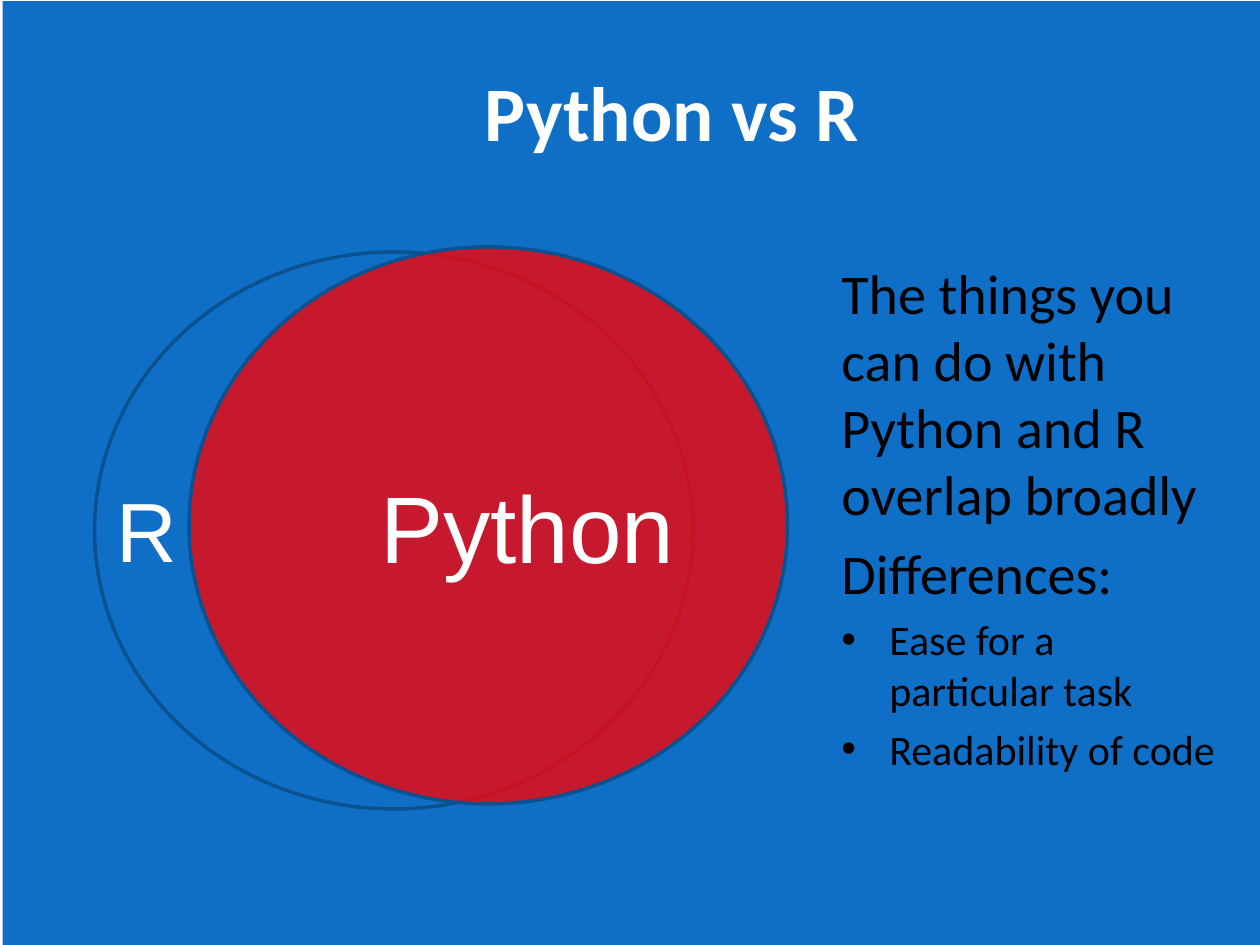
from lxml.etree import SubElement
from pptx import Presentation
from pptx.dml.color import RGBColor
from pptx.enum.shapes import MSO_SHAPE as Shape
from pptx.enum.text import MSO_ANCHOR as Anchor, PP_ALIGN as Align
from pptx.oxml.ns import qn
from pptx.util import Inches, Pt

COLUMNS, ROWS = 100, 75
BLUE, EDGE, RED, WHITE, BLACK = "0F6FC6", "0A5190", "FF0000", "FFFFFF", "000000"


def color(value):
    """Turn a hex string into a colour."""
    return RGBColor.from_string(value)


def apply(target, values):
    """Set every attribute named in the dict of format values."""
    for name, value in values.items():
        setattr(target, name, value)


class SlideBuilder:
    """Hold the style and the current slide, and draw on its grid."""

    title = {"name": "Calibri", "size": Pt(44), "bold": True}
    body = {"name": "Calibri", "size": Pt(32)}
    bullet = {"name": "Calibri", "size": Pt(24)}
    python_label = {"name": "Arial", "size": Pt(54)}
    r_label = {"name": "Arial", "size": Pt(48)}

    def __init__(self, presentation):
        """Add a blank slide and measure its grid cells."""
        self.slide = presentation.slides.add_slide(presentation.slide_layouts[6])
        self.column = presentation.slide_width / COLUMNS
        self.row = presentation.slide_height / ROWS

    def place(self, left, top, width, height):
        """Convert columns and rows to slide lengths."""
        return [round(n * unit) for n, unit in zip(
            (left, top, width, height), (self.column, self.row) * 2)]

    def shape(self, kind, area, fill, line=None, opacity=None):
        """Draw a filled preset shape."""
        shape = self.slide.shapes.add_shape(kind, *self.place(*area))
        shape.shadow.inherit = False
        shape.fill.solid()
        shape.fill.fore_color.rgb = color(fill)
        if opacity:
            tint = shape._element.spPr.find(qn("a:solidFill")).find(qn("a:srgbClr"))
            SubElement(tint, qn("a:alpha"), val=str(opacity * 1000))
        if line:
            shape.line.color.rgb = color(line)
            shape.line.width = Pt(2)
        else:
            shape.line.fill.background()
        return shape

    def text_box(self, area, **frame_format):
        """Add an empty wrapping text box and return its frame."""
        frame = self.slide.shapes.add_textbox(*self.place(*area)).text_frame
        apply(frame, {"word_wrap": True, **frame_format})
        return frame

    def add_text(self, paragraph, text, font, ink=WHITE, **paragraph_format):
        """Put one styled run into a paragraph."""
        apply(paragraph, paragraph_format)
        run = paragraph.add_run()
        run.text = text
        apply(run.font, font)
        run.font.color.rgb = color(ink)

    def add_bullet(self, paragraph):
        """Give a paragraph a hanging round bullet."""
        properties = paragraph._p.get_or_add_pPr()
        properties.set("marL", str(Inches(0.38)))
        properties.set("indent", str(-Inches(0.38)))
        SubElement(SubElement(properties, qn("a:buClr")), qn("a:srgbClr"), val=BLACK)
        SubElement(properties, qn("a:buFont"), typeface="Arial")
        SubElement(properties, qn("a:buChar"), char="•")

    def body_text(self, area, paragraphs, bullets):
        """Add plain paragraphs followed by bullets."""
        frame = self.text_box(area)
        items = [(text, self.body, 6.4) for text in paragraphs]
        items += [(text, self.bullet, 4.8) for text in bullets]
        for index, (text, font, gap) in enumerate(items):
            paragraph = frame.add_paragraph() if index else frame.paragraphs[0]
            if font is self.bullet:
                self.add_bullet(paragraph)
            self.add_text(paragraph, text, font, BLACK, space_before=Pt(gap if index else 0))


def main():
    """Build the comparison slide."""
    presentation = Presentation()
    apply(presentation, {"slide_width": Inches(10), "slide_height": Inches(7.5)})
    builder = SlideBuilder(presentation)

    builder.shape(Shape.RECTANGLE, (0.2, 0.1, COLUMNS - 0.2, ROWS - 0.1), BLUE)
    title = builder.text_box((11.7, 2.5, 83.3, 12.5), vertical_anchor=Anchor.MIDDLE)
    builder.add_text(title.paragraphs[0], "Python vs R", builder.title, alignment=Align.CENTER)
    builder.body_text(
        (65.8, 20, 32.5, 47),
        ["The things you can do with Python and R overlap broadly", "Differences:"],
        ["Ease for a particular task", "Readability of code"])

    builder.shape(Shape.OVAL, (7.5, 20, 47.5, 44.2), BLUE, EDGE)
    python = builder.shape(Shape.OVAL, (15, 19.6, 47.5, 44.2), RED, EDGE, opacity=77)
    apply(python.text_frame, {"margin_left": Inches(0.72), "word_wrap": True,
                              "vertical_anchor": Anchor.MIDDLE})
    builder.add_text(python.text_frame.paragraphs[0], "Python", builder.python_label,
                     alignment=Align.CENTER)
    label = builder.text_box((8.3, 37.5, 8.7, 9.1))
    builder.add_text(label.paragraphs[0], "R", builder.r_label)

    presentation.save("out.pptx")


if __name__ == "__main__":
    main()
